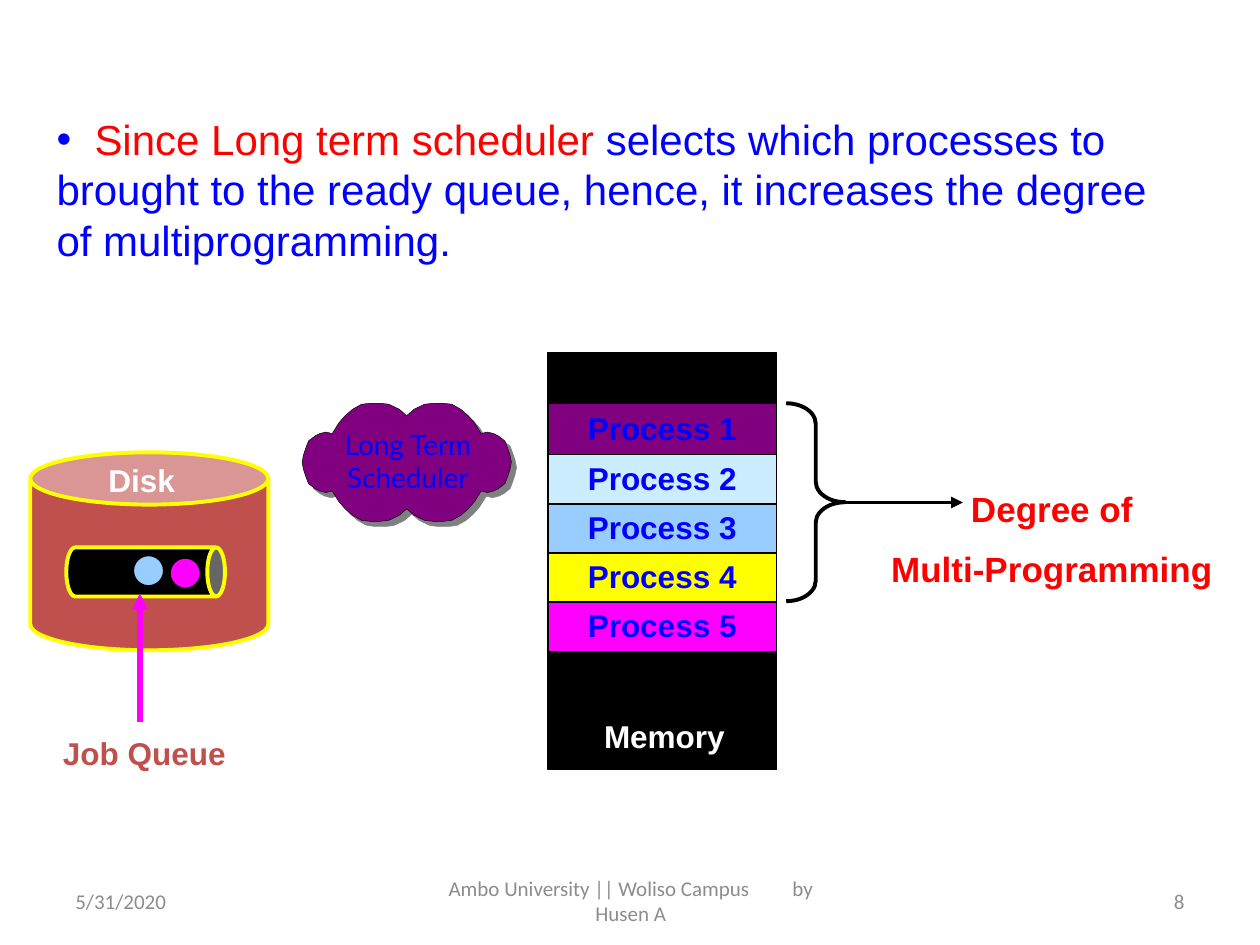
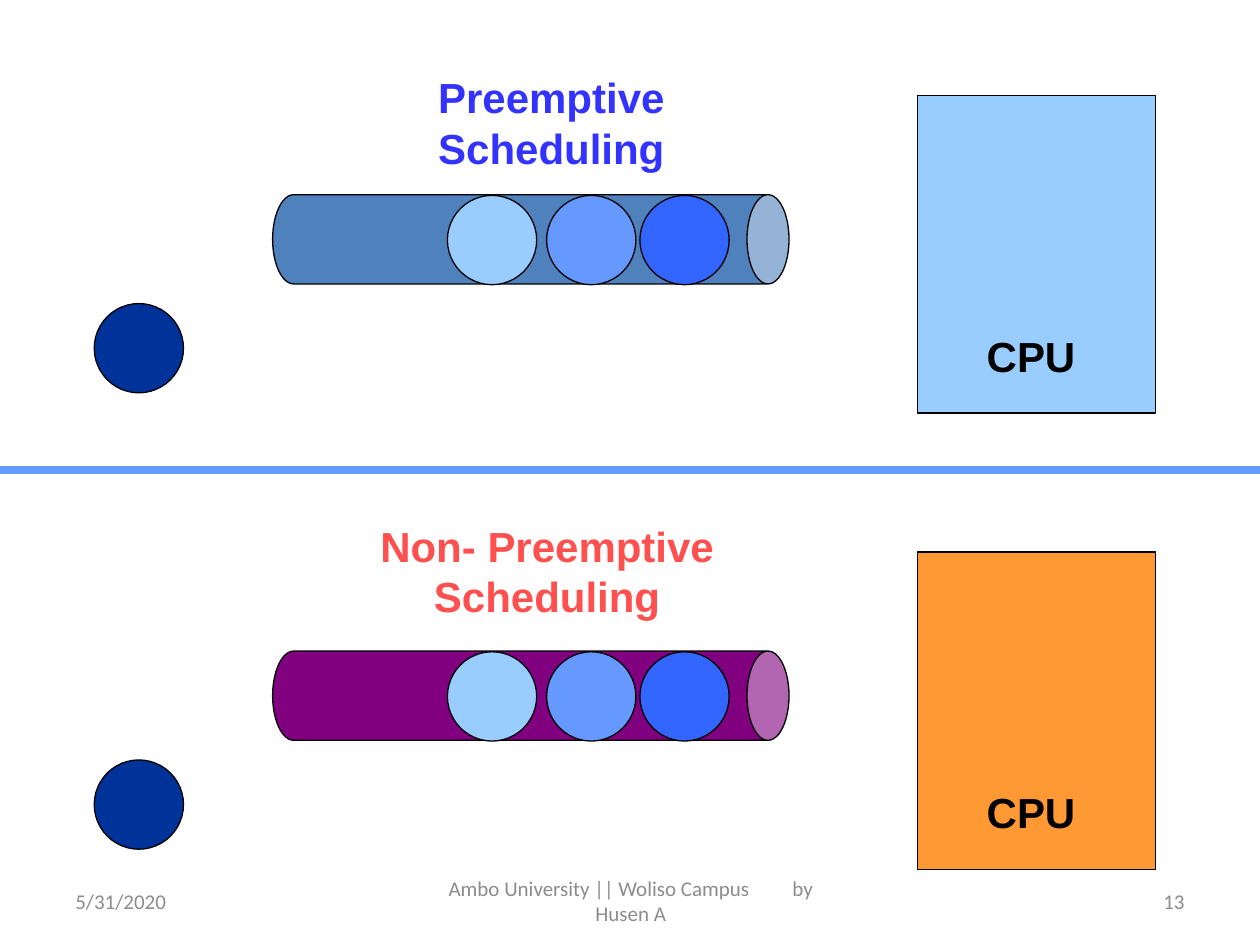
from typing import NamedTuple

from lxml import etree
from pptx import Presentation
from pptx.dml.color import RGBColor
from pptx.enum.shapes import MSO_CONNECTOR, MSO_SHAPE
from pptx.enum.text import MSO_ANCHOR, PP_ALIGN
from pptx.oxml.ns import qn
from pptx.util import Cm, Pt

RECTANGLE = MSO_SHAPE.RECTANGLE
OVAL = MSO_SHAPE.OVAL
CAN = MSO_SHAPE.CAN
BRACE = MSO_SHAPE.RIGHT_BRACE
STRAIGHT = MSO_CONNECTOR.STRAIGHT
TOP, MIDDLE = MSO_ANCHOR.TOP, MSO_ANCHOR.MIDDLE
LEFT, CENTER, RIGHT = PP_ALIGN.LEFT, PP_ALIGN.CENTER, PP_ALIGN.RIGHT

COLORS = {
    "black": "000000",
    "white": "FFFFFF",
    "gray": "8C8C8C",
    "shadow": "808080",
    "text_blue": "0000FF",
    "red": "FF0000",
    "brick": "C0504D",
    "yellow": "FFFF00",
    "magenta": "FF00FF",
    "purple": "800080",
    "ice": "CCECFF",
    "sky": "99CCFF",
    "cornflower": "6699FF",
    "royal": "3366FF",
    "navy": "003399",
    "steel": "4F81BD",
    "orange": "FF9933",
    "indigo": "3333FF",
    "coral": "FF5050",
}


class Area(NamedTuple):
    left: float
    top: float
    width: float
    height: float

    def lengths(self) -> list:
        return [Cm(value) for value in self]


class Process(NamedTuple):
    name: str
    color: str


class Panel(NamedTuple):
    heading: str
    heading_area: Area
    heading_color: str
    queue_color: str
    cpu_color: str
    offset: float


class Ball(NamedTuple):
    left: float
    top: float
    color: str


PROCESSES = [
    Process("Process 1", "purple"),
    Process("Process 2", "ice"),
    Process("Process 3", "sky"),
    Process("Process 4", "yellow"),
    Process("Process 5", "magenta"),
]
PANELS = [
    Panel("Preemptive Scheduling", Area(6.71, 1.32, 8.81, 2.29),
          "indigo", "steel", "sky", 0),
    Panel("Non- Preemptive Scheduling", Area(5.33, 10.36, 11.4, 2.29),
          "coral", "purple", "orange", 9.2),
]
BALLS = [
    Ball(1.9, 6.12, "navy"),
    Ball(9.02, 3.94, "sky"),
    Ball(11.02, 3.94, "cornflower"),
    Ball(12.9, 3.94, "royal"),
]
CLOUD_CENTER = (8.2, 9.32)
CLOUD_QUARTER = [
    (2.11, 0), (2.08, 0.15), (2.03, 0.3), (1.98, 0.43), (1.85, 0.53),
    (1.75, 0.58), (1.63, 0.61), (1.5, 0.58), (1.37, 0.79), (1.24, 0.94),
    (1.09, 1.07), (0.91, 1.17), (0.74, 1.19), (0.53, 1.19), (0.36, 1.17),
    (0.15, 1.07), (0, 0.94),
]


def rgb(color: str) -> RGBColor:
    return RGBColor.from_string(COLORS[color])


def write(para, text: str, *, size: float = 18, color: str = "text_blue",
          font: str = "Arial", bold: bool = False, align=CENTER,
          spacing: float = 0) -> None:
    para.alignment = align
    span = para.add_run()
    span.text = text
    span.font.size = Pt(size)
    span.font.name = font
    span.font.bold = bold
    span.font.color.rgb = rgb(color)
    if spacing:
        span.font._element.set("spc", str(round(spacing * 100)))


def add_text_box(page, area: Area, anchor=TOP, inset: bool = True):
    frame = page.shapes.add_textbox(*area.lengths()).text_frame
    frame.word_wrap = True
    frame.vertical_anchor = anchor
    if not inset:
        frame.margin_left = frame.margin_right = 0
        frame.margin_top = frame.margin_bottom = 0
    return frame


def add_label(page, area: Area, text: str, **style) -> None:
    write(add_text_box(page, area).paragraphs[0], text, bold=True, **style)


def paint(shape, fill: str | None, line: str, width: float) -> None:
    shape.shadow.inherit = False
    if fill:
        shape.fill.solid()
        shape.fill.fore_color.rgb = rgb(fill)
    else:
        shape.fill.background()
    shape.line.color.rgb = rgb(line)
    shape.line.width = Pt(width)


def add_figure(page, kind, area: Area, fill: str | None, *,
               line: str = "black", width: float = 0.75,
               bend: float | None = None, rotation: float = 0):
    shape = page.shapes.add_shape(kind, *area.lengths())
    paint(shape, fill, line, width)
    shape.rotation = rotation
    if bend is not None:
        shape.adjustments[0] = bend
    return shape


def add_line(page, start: tuple, end: tuple, color: str, width: float,
             arrow: bool = False) -> None:
    ends = [Cm(value) for value in start + end]
    line = page.shapes.add_connector(STRAIGHT, *ends)
    line.line.color.rgb = rgb(color)
    line.line.width = Pt(width)
    if arrow:
        stroke = line.line._get_or_add_ln()
        etree.SubElement(stroke, qn("a:tailEnd"), type="triangle")
    etree.SubElement(line._element.spPr, qn("a:effectLst"))


def add_footer(page, number: int) -> None:
    style = {"size": 12, "color": "gray", "font": "Calibri"}
    date = add_text_box(page, Area(1.27, 17.65, 5.92, 1.02), MIDDLE)
    write(date.paragraphs[0], "5/31/2020", align=LEFT, **style)
    count = add_text_box(page, Area(18.21, 17.65, 5.92, 1.02), MIDDLE)
    write(count.paragraphs[0], str(number), align=RIGHT, **style)
    campus = add_text_box(page, Area(8.69, 17.65, 8.05, 1.02), MIDDLE)
    para = campus.paragraphs[0]
    write(para, "Ambo University || Woliso Campus", **style)
    write(para, " ", spacing=21.7, **style)
    write(para, "by Husen A", **style)


def add_statement(page) -> None:
    area = Area(0.89, 1.12, 22.81, 5.38)
    para = add_text_box(page, area, MIDDLE).paragraphs[0]
    style = {"size": 24, "align": LEFT}
    write(para, " ", spacing=6.7, **style)
    write(para, "Since Long term scheduler", color="red", **style)
    write(para, " selects which processes to brought to the ready queue, "
          "hence, it increases the degree of multiprogramming.", **style)
    settings = para._p.get_or_add_pPr()
    settings.set("marL", "0")
    settings.set("indent", "0")
    etree.SubElement(settings, qn("a:buFont"), typeface="Arial")
    etree.SubElement(settings, qn("a:buChar"), char="•")


def add_cloud(page) -> None:
    upper = [(-x, -y) for x, y in CLOUD_QUARTER]
    upper += [(-x, y) for x, y in reversed(upper[:-1])]
    outline = upper + [(x, -y) for x, y in reversed(upper[1:-1])]
    middle_x, middle_y = CLOUD_CENTER
    points = [(Cm(middle_x + x), Cm(middle_y + y)) for x, y in outline]
    builder = page.shapes.build_freeform(*points[0])
    builder.add_line_segments(points[1:], close=True)
    cloud = builder.convert_to_shape()
    paint(cloud, "purple", "black", 0.25)
    effects = cloud._element.spPr.find(qn("a:effectLst"))
    shadow = etree.SubElement(effects, qn("a:outerShdw"), dist=str(Pt(4.2)),
                              dir="2700000", algn="ctr", rotWithShape="0")
    etree.SubElement(shadow, qn("a:srgbClr"), val=COLORS["shadow"])
    caption = add_text_box(page, Area(6.55, 8.61, 3.35, 1.57), inset=False)
    write(caption.paragraphs[0], "Long Term Scheduler", size=16, font="Lato")


def add_disk(page) -> None:
    add_figure(page, CAN, Area(0.61, 9.12, 4.8, 3.99), "brick",
               line="yellow", width=2.25, bend=0.264)
    add_figure(page, CAN, Area(2.44, 9.93, 0.99, 3.2), "black",
               line="yellow", width=2.25, bend=0.36, rotation=90)
    add_line(page, (2.82, 14.55), (2.82, 11.96), "magenta", 3, arrow=True)
    add_label(page, Area(0.51, 14.68, 4.8, 1.02), "Job Queue", color="brick")
    add_figure(page, OVAL, Area(2.69, 11.2, 0.61, 0.61), "sky")
    add_figure(page, OVAL, Area(3.43, 11.25, 0.61, 0.61), "magenta")
    add_label(page, Area(0.99, 9.17, 3.73, 1.02), "Disk", color="white")


def add_memory(page) -> None:
    add_figure(page, RECTANGLE, Area(11.05, 7.11, 4.6, 8.41), "black")
    add_label(page, Area(11.53, 14.33, 3.73, 1.02), "Memory", color="white")
    for row, process in reversed(list(enumerate(PROCESSES))):
        area = Area(11.05, 8.13 + 0.99 * row, 4.6, 1.04)
        cell = add_figure(page, RECTANGLE, area, process.color)
        cell.text_frame.vertical_anchor = TOP
        write(cell.text_frame.paragraphs[0], process.name, bold=True)


def add_degree(page) -> None:
    add_figure(page, BRACE, Area(15.85, 8.13, 1.19, 3.99), None,
               width=2.25, bend=0.347)
    add_line(page, (17.02, 10.13), (19.41, 10.13), "black", 2.25, arrow=True)
    frame = add_text_box(page, Area(17.7, 9.7, 7.01, 2.36))
    style = {"size": 20, "color": "red", "bold": True}
    write(frame.paragraphs[0], "Degree of", **style)
    second = frame.add_paragraph()
    second.space_before = Pt(10.5)
    write(second, "Multi-Programming", **style)


def add_panel(page, panel: Panel) -> None:
    down = panel.offset
    add_figure(page, RECTANGLE, Area(18.49, 1.93 + down, 4.8, 6.4),
               panel.cpu_color)
    add_label(page, Area(18.69, 6.53 + down, 4.19, 1.27), "CPU",
              size=24, color="black")
    add_figure(page, CAN, Area(9.8, -0.38 + down, 1.8, 10.41),
               panel.queue_color, bend=0.471, rotation=90)
    for ball in BALLS:
        add_figure(page, OVAL, Area(ball.left, ball.top + down, 1.8, 1.8),
                   ball.color)
    add_label(page, panel.heading_area, panel.heading,
              size=24, color=panel.heading_color)


def main() -> None:
    deck = Presentation()
    deck.slide_width, deck.slide_height = Cm(25.4), Cm(19.05)
    blank = deck.slide_layouts[6]

    page = deck.slides.add_slide(blank)
    add_statement(page)
    add_degree(page)
    add_disk(page)
    add_cloud(page)
    add_memory(page)
    add_footer(page, 8)

    page = deck.slides.add_slide(blank)
    for panel in PANELS:
        add_panel(page, panel)
    add_line(page, (25.4, 9.47), (0, 9.47), "cornflower", 4.5)
    add_footer(page, 13)

    deck.save("out.pptx")


if __name__ == "__main__":
    main()
